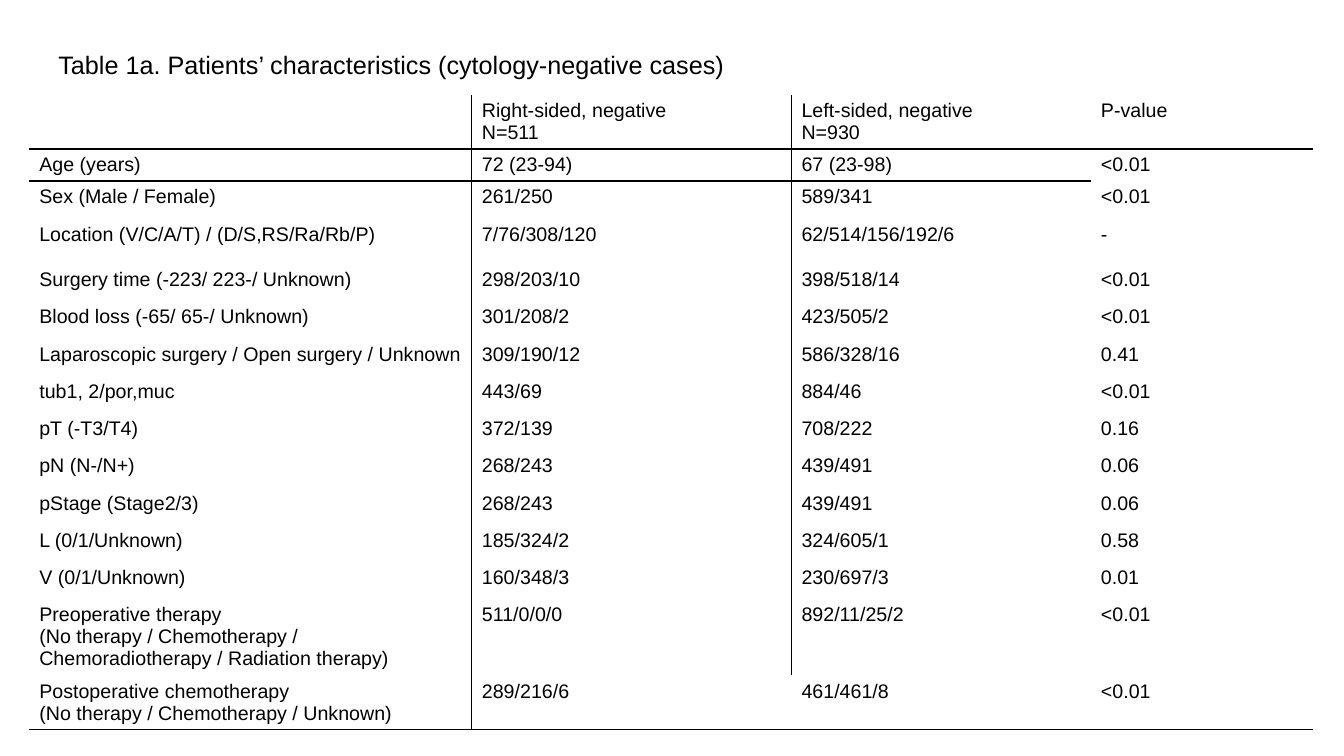
from dataclasses import dataclass

from lxml.etree import SubElement
from pptx import Presentation
from pptx.dml.color import RGBColor
from pptx.enum.text import MSO_AUTO_SIZE
from pptx.oxml.ns import qn
from pptx.util import Inches, Pt


@dataclass(frozen=True)
class Theme:
    font: str = "Arial"
    ink: str = "000000"
    title_size: int = 18
    body_size: int = 14
    rule_width: int = 1


THEME = Theme()
TITLE = "Table 1a. Patients’ characteristics (cytology-negative cases)"
ROWS = [
    ("", "Right-sided, negative\nN=511", "Left-sided, negative\nN=930", "P-value"),
    ("Age (years)", "72 (23-94)", "67 (23-98)", "<0.01"),
    ("Sex (Male / Female)", "261/250", "589/341", "<0.01"),
    ("Location (V/C/A/T) / (D/S,RS/Ra/Rb/P)", "7/76/308/120", "62/514/156/192/6", "-"),
    ("Surgery time (-223/ 223-/ Unknown)", "298/203/10", "398/518/14", "<0.01"),
    ("Blood loss (-65/ 65-/ Unknown)", "301/208/2", "423/505/2", "<0.01"),
    ("Laparoscopic surgery / Open surgery / Unknown", "309/190/12", "586/328/16", "0.41"),
    ("tub1, 2/por,muc", "443/69", "884/46", "<0.01"),
    ("pT (-T3/T4)", "372/139", "708/222", "0.16"),
    ("pN (N-/N+)", "268/243", "439/491", "0.06"),
    ("pStage (Stage2/3)", "268/243", "439/491", "0.06"),
    ("L (0/1/Unknown)", "185/324/2", "324/605/1", "0.58"),
    ("V (0/1/Unknown)", "160/348/3", "230/697/3", "0.01"),
    ("Preoperative therapy\n(No therapy / Chemotherapy / Chemoradiotherapy / Radiation therapy)",
     "511/0/0/0", "892/11/25/2", "<0.01"),
    ("Postoperative chemotherapy\n(No therapy / Chemotherapy / Unknown)",
     "289/216/6", "461/461/8", "<0.01"),
]
COL_WIDTHS = [4.39, 3.17, 2.97, 2.2]
ROW_HEIGHT = 0.37
SPECIAL_HEIGHTS = {0: 0.53, 1: 0.27, 3: 0.45, 13: 0.45, 14: 0.45}
LAST = len(ROWS) - 1


def style_text(tf, size):
    for p in tf.paragraphs:
        p.font.size = Pt(size)
        for r in p.runs:
            r.font.name = THEME.font
            r.font.size = Pt(size)
            r.font.color.rgb = RGBColor.from_string(THEME.ink)


def rule_below(row, col):
    """Rules close the header, the age row (not its P-value) and the table."""
    return row in (0, LAST) or (row == 1 and col < 3)


def rule_right(row, col):
    """The label column is ruled throughout, the next one down to the last row."""
    return col == 0 or (col == 1 and row < LAST)


def set_borders(cell, row, col):
    sides = {
        "a:lnL": col > 0 and rule_right(row, col - 1),
        "a:lnR": rule_right(row, col),
        "a:lnT": row > 0 and rule_below(row - 1, col),
        "a:lnB": rule_below(row, col),
    }
    tc_pr = cell._tc.get_or_add_tcPr()
    for tag, ruled in sides.items():
        ln = SubElement(tc_pr, qn(tag), w=str(Pt(THEME.rule_width)))
        if ruled:
            fill = SubElement(ln, qn("a:solidFill"))
            SubElement(fill, qn("a:srgbClr"), val=THEME.ink)
        else:
            SubElement(ln, qn("a:noFill"))


def add_title(s, left, top, width, height):
    sp = s.shapes.add_textbox(Inches(left), Inches(top), Inches(width), Inches(height))
    tf = sp.text_frame
    tf.text = TITLE
    tf.word_wrap = False
    tf.auto_size = MSO_AUTO_SIZE.SHAPE_TO_FIT_TEXT
    style_text(tf, THEME.title_size)


def add_characteristics(s, left, top, width, height):
    frame = s.shapes.add_table(len(ROWS), len(COL_WIDTHS), Inches(left), Inches(top),
                               Inches(width), Inches(height))
    table = frame.table
    table.first_row = table.horz_banding = False
    # Column widths share out the box
    for column, share in zip(table.columns, COL_WIDTHS):
        column.width = Inches(width * share / sum(COL_WIDTHS))
    # Cells: text, rules, then no fill
    for i, values in enumerate(ROWS):
        table.rows[i].height = Inches(SPECIAL_HEIGHTS.get(i, ROW_HEIGHT))
        for j, value in enumerate(values):
            cell = table.cell(i, j)
            cell.text_frame.text = value
            style_text(cell.text_frame, THEME.body_size)
            set_borders(cell, i, j)
            cell.fill.background()


def main():
    prs = Presentation()
    prs.slide_width, prs.slide_height = Inches(13.33), Inches(7.5)
    s = prs.slides.add_slide(prs.slide_layouts[6])
    add_characteristics(s, 0.29, 0.94, 12.73, 6.39)
    add_title(s, 0.48, 0.44, 6.82, 0.4)
    prs.save("out.pptx")


if __name__ == "__main__":
    main()
